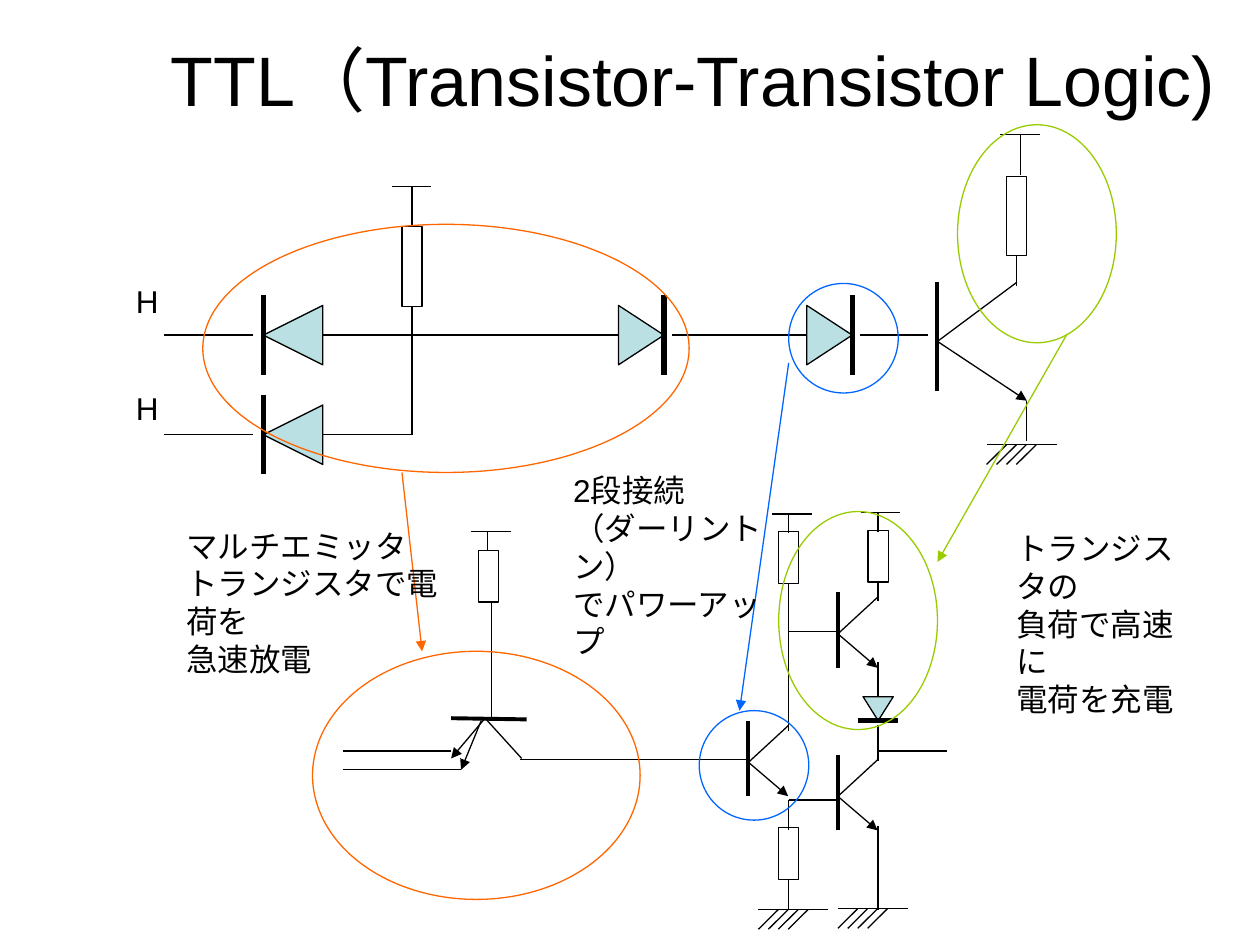
from dataclasses import dataclass
from math import cos, radians, sin

from lxml.etree import SubElement
from pptx import Presentation
from pptx.dml.color import RGBColor
from pptx.enum.shapes import MSO_CONNECTOR as CONN, MSO_SHAPE as SHAPE
from pptx.enum.text import MSO_ANCHOR as ANCHOR, PP_ALIGN as ALIGN
from pptx.oxml.ns import qn
from pptx.util import Pt


@dataclass(frozen=True)
class Theme:
    """Colours, font, type sizes and line widths of the slide."""
    ink: str = "000000"
    diode: str = "BBE0E3"
    orange: str = "FF6600"
    blue: str = "0066FF"
    green: str = "99CC00"
    font: str = "Arial"
    title: int = 40
    body: int = 18
    thin: float = 0.75
    base: float = 2.25
    bar: float = 3


T = Theme()
BIG = (62, 33.8, (45.4, 0), (51.1, 67.7))
SMALL = (43.2, 23.8, (22.7, 2.9), (22.7, 43.2))


def rgb(code):
    """Turn a hex code into a colour."""
    return RGBColor.from_string(code)


def wire(s, x1, y1, x2, y2, color=T.ink, width=T.thin, arrow=False):
    """Draw a straight line, with an arrowhead at its end if asked."""
    cn = s.shapes.add_connector(CONN.STRAIGHT, Pt(x1), Pt(y1), Pt(x2), Pt(y2))
    cn.line.color.rgb = rgb(color)
    cn.line.width = Pt(width)
    if arrow:
        SubElement(cn.line._get_or_add_ln(), qn("a:tailEnd"), type="triangle")
    SubElement(cn._element.spPr, qn("a:effectLst"))


def outline(s, kind, x, y, w, h, color=T.ink, fill=None):
    """Draw a thin-lined preset shape, hollow unless a fill is given."""
    sp = s.shapes.add_shape(kind, Pt(x), Pt(y), Pt(w), Pt(h))
    sp.shadow.inherit = False
    sp.line.color.rgb = rgb(color)
    sp.line.width = Pt(T.thin)
    if fill:
        sp.fill.solid()
        sp.fill.fore_color.rgb = rgb(fill)
    else:
        sp.fill.background()
    return sp


def resistor(s, x, y, h):
    """Draw an upright resistor."""
    outline(s, SHAPE.RECTANGLE, x, y, 11.5, h)


def diode(s, x, y, angle, length, width, bar):
    """Draw a diode whose tip is at x, y, turned clockwise from upward."""
    dx, dy = sin(radians(angle)), -cos(radians(angle))
    cx, cy = x - dx * length / 2, y - dy * length / 2
    sp = outline(s, SHAPE.ISOSCELES_TRIANGLE, cx - width / 2, cy - length / 2,
                 width, length, fill=T.diode)
    sp.rotation = angle
    ox, oy = abs(dy) * bar / 2, abs(dx) * bar / 2
    wire(s, x - ox, y - oy, x + ox, y + oy, width=T.bar)


def transistor(s, x, top, size):
    """Draw a transistor from the top of its base bar."""
    height, base, (cx, cy), (ex, ey) = size
    wire(s, x, top, x, top + height, width=T.base)
    wire(s, x + cx, top + cy, x, top + base)
    wire(s, x, top + base, x + ex, top + ey, arrow=True)


def supply(s, x, y, stem_x, drop):
    """Draw a supply rail with its stem."""
    wire(s, x, y, x + 22.5, y)
    wire(s, stem_x, y, stem_x, y + drop)


def ground(s, x, y):
    """Draw a ground rail with four hatch strokes."""
    wire(s, x, y, x + 40, y)
    for i in range(4):
        end = x + 5.67 * i
        wire(s, end + 11.3, y, end, y + 11.2)


def style(p, size):
    """Format all runs of a paragraph."""
    for r in p.runs:
        r.font.size = Pt(size)
        r.font.name = T.font
        r.font.color.rgb = rgb(T.ink)


def label(s, x, y, w, h, *lines):
    """Add a wrapped text box with one paragraph per line."""
    tf = s.shapes.add_textbox(Pt(x), Pt(y), Pt(w), Pt(h)).text_frame
    tf.word_wrap = True
    tf.text = "\n".join(lines)
    for p in tf.paragraphs:
        style(p, T.body)


def title(s, text):
    """Place and format the title."""
    sp = s.shapes.title
    sp.left, sp.top, sp.width, sp.height = Pt(72), Pt(0), Pt(648), Pt(90)
    tf = sp.text_frame
    tf.text = text
    tf.vertical_anchor = ANCHOR.MIDDLE
    tf.paragraphs[0].alignment = ALIGN.CENTER
    style(tf.paragraphs[0], T.title)


def diode_logic(s):
    """Draw the upper circuit."""
    for y in (191.5, 248.4):
        diode(s, 150.5, y, 270, 34, 34, 45.4)
        wire(s, 235.4, y, 184.3, y)
        wire(s, 144.7, y, 93.6, y)
        label(s, 70.6, y - 33.8 if y < 200 else y - 29.5, 27.4, 28.8, "H")
    for x in (379.4, 487):
        diode(s, x, 191.5, 90, 26, 34, 45.4)
        wire(s, x - 64.8, 191.5, x - 25.9, 191.5)
        wire(s, x + 4.4, 191.5, x + 43.2, 191.5)
    supply(s, 223.9, 106.6, 235.4, 23)
    supply(s, 571.7, 77, 583.2, 23)
    resistor(s, 229.7, 129.6, 45.4)
    resistor(s, 575.3, 100.8, 45.4)
    transistor(s, 535.7, 161.3, BIG)
    ground(s, 563.8, 254.2)
    for ends in ((235.4, 175, 235.4, 191.5), (235.4, 191.5, 235.4, 248.4),
                 (235.4, 191.5, 257.8, 191.5), (250.6, 191.5, 319, 191.5),
                 (581, 146.2, 581, 163.4), (586.8, 229, 586.8, 252)):
        wire(s, *ends)


def multi_emitter(s):
    """Draw the input transistor with two emitters."""
    supply(s, 269.3, 303.8, 278.6, 11)
    resistor(s, 273.6, 314.6, 29.5)
    wire(s, 301, 411.1, 257.8, 410.4, width=T.base)
    wire(s, 277.2, 410.4, 257.8, 433.4, arrow=True)
    wire(s, 275, 411.8, 263.5, 439.9, arrow=True)
    for ends in ((298.1, 433.4, 277.2, 410.4), (257.8, 429.1, 195.8, 429.1),
                 (263.5, 439.9, 195.8, 439.9), (280.8, 343.4, 280.8, 411.8),
                 (297.4, 434.2, 427.7, 434.2)):
        wire(s, *ends)


def output_stage(s):
    """Draw the phase splitter and the output transistors."""
    for x, top in ((478.8, 431.3), (427.7, 411.8), (478.8, 338.4)):
        transistor(s, x, top, SMALL)
    supply(s, 491.8, 293, 501.8, 11)
    supply(s, 441.4, 293.8, 450.7, 11)
    for x, y in ((445, 473), (496.1, 303.1), (445, 303.8)):
        resistor(s, x, y, 29.5)
    ground(s, 478.8, 519.3)
    ground(s, 433.4, 519.8)
    diode(s, 501.8, 411.8, 180, 13.7, 17.3, 23)
    for x, y1, y2 in ((501.8, 472.3, 519.8), (501.8, 378, 398.2),
                      (501.8, 414, 434.9), (501.8, 332.6, 343.4),
                      (450.7, 502.6, 519.8), (450.7, 457.2, 474.5),
                      (450.7, 333.4, 417.6)):
        wire(s, x, y1, x, y2)
    for x1, x2, y in ((450.7, 478.8, 457.2), (450.7, 478.8, 360.7),
                      (501.8, 541.4, 429.1)):
        wire(s, x1, y, x2, y)


def highlights(s):
    """Ring the matching parts and link them with arrows and notes."""
    for color, w, h, spots, arrow in (
            (T.orange, 277.9, 141.8, ((115.9, 128.2, 277.9), (178.6, 372.2, 187.2)),
             (229.7, 270, 241.2, 372.2)),
            (T.blue, 62.6, 62.6, ((450.7, 162, 62.6), (399.6, 406.1, 62.6)),
             (450.7, 207.4, 422.6, 406.1)),
            (T.green, 90.7, 124.6, ((547.2, 71.3, 90.7), (445, 292.3, 90.7)),
             (609.8, 190.8, 535.7, 321.1))):
        for x, y, w in spots:
            outline(s, SHAPE.OVAL, x, y, w, h, color)
        wire(s, *arrow, color=color, arrow=True)
    label(s, 573.8, 298.8, 120.2, 72, "トランジスタの", "負荷で高速に", "電荷を充電")
    label(s, 320.4, 265.7, 128.2, 72, "2段接続", "（ダーリントン）", "でパワーアップ")
    label(s, 99.4, 297.4, 169.9, 72, "マルチエミッタ", "トランジスタで電荷を", "急速放電")


def main():
    """Build and save the slide."""
    prs = Presentation()
    prs.slide_width, prs.slide_height = Pt(720), Pt(540)
    s = prs.slides.add_slide(prs.slide_layouts[5])
    title(s, "TTL（Transistor-Transistor Logic)")
    diode_logic(s)
    multi_emitter(s)
    output_stage(s)
    highlights(s)
    prs.save("out.pptx")


if __name__ == "__main__":
    main()
